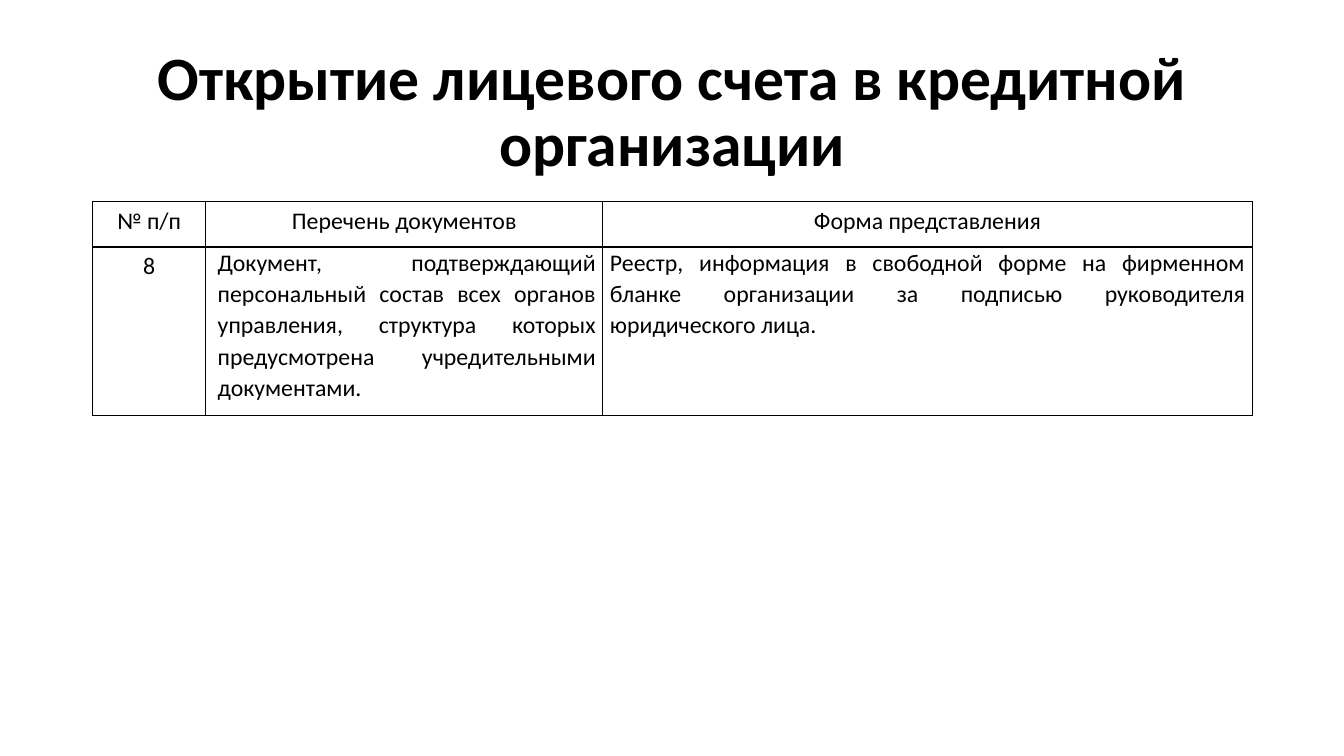
from dataclasses import dataclass

from lxml import etree
from pptx import Presentation
from pptx import util as u
from pptx.dml.color import RGBColor
from pptx.enum import text
from pptx.oxml.ns import qn


@dataclass(frozen=True)
class Theme:
    font: str = "Calibri"
    ink: str = "000000"
    paper: str = "FFFFFF"
    title_size: int = 44
    cell_size: int = 17
    border: float = 1


THEME = Theme()
CENTER, JUSTIFY = text.PP_ALIGN.CENTER, text.PP_ALIGN.JUSTIFY

TITLE = "Открытие лицевого счета в кредитной организации"
HEADER = ["№ п/п", "Перечень документов", "Форма представления"]
DOCUMENT_ROW = [
    "8",
    "Документ, подтверждающий персональный состав всех органов управления, "
    "структура которых предусмотрена учредительными документами.",
    "Реестр, информация в свободной форме на фирменном бланке организации "
    "за подписью руководителя юридического лица.",
]
COLUMN_WIDTHS = [1.12, 3.94, 6.44]
ROW_HEIGHTS = [0.45, 1.67]


def write(tf, words, size, align, spacing=1.0, bold=False):
    p = tf.paragraphs[0]
    p.alignment = align
    p.line_spacing = spacing
    r = p.add_run()
    r.text = words
    r.font.name = THEME.font
    r.font.size = u.Pt(size)
    r.font.bold = bold
    r.font.color.rgb = RGBColor.from_string(THEME.ink)
    return p


def add_title(s, left, top, width, height):
    box = s.shapes.add_textbox(*map(u.Inches, (left, top, width, height)))
    tf = box.text_frame
    tf.word_wrap = True
    tf.vertical_anchor = text.MSO_ANCHOR.MIDDLE
    write(tf, TITLE, THEME.title_size, CENTER, 0.9, bold=True)


def set_borders(cell):
    tc_pr = cell._tc.get_or_add_tcPr()
    for i, side in enumerate(("lnL", "lnR", "lnT", "lnB")):
        ln = etree.Element(qn(f"a:{side}"), w=str(u.Pt(THEME.border)))
        fill = etree.SubElement(ln, qn("a:solidFill"))
        etree.SubElement(fill, qn("a:srgbClr"), val=THEME.ink)
        tc_pr.insert(i, ln)


def fill_cell(cell, words, justified):
    cell.fill.solid()
    cell.fill.fore_color.rgb = RGBColor.from_string(THEME.paper)
    set_borders(cell)
    if not justified:
        return write(cell.text_frame, words, THEME.cell_size, CENTER)
    cell.margin_left = cell.margin_right = u.Inches(0.07)
    cell.margin_top = cell.margin_bottom = 0
    return write(cell.text_frame, words, THEME.cell_size, JUSTIFY, 1.07)


def add_documents_table(s, left, top, width, height):
    rows = [HEADER, DOCUMENT_ROW]
    table = s.shapes.add_table(
        len(rows), len(HEADER), *map(u.Inches, (left, top, width, height))
    ).table
    table.first_row = table.horz_banding = False
    for column, column_width in zip(table.columns, COLUMN_WIDTHS):
        column.width = u.Inches(column_width)
    for i, (words_row, row_height) in enumerate(zip(rows, ROW_HEIGHTS)):
        table.rows[i].height = u.Inches(row_height)
        for j, words in enumerate(words_row):
            p = fill_cell(table.cell(i, j), words, justified=i > 0 and j > 0)
            if (i, j) == (1, 1):
                p._p.get_or_add_pPr().set("marL", str(u.Inches(0.05)))


def main():
    prs = Presentation()
    prs.slide_width, prs.slide_height = u.Inches(13.33), u.Inches(7.5)
    s = prs.slides.add_slide(prs.slide_layouts[6])
    left, width = 0.92, 11.5
    add_title(s, left, 0.4, width, 1.45)
    add_documents_table(s, left, 2, width, sum(ROW_HEIGHTS))
    prs.save("out.pptx")


if __name__ == "__main__":
    main()
